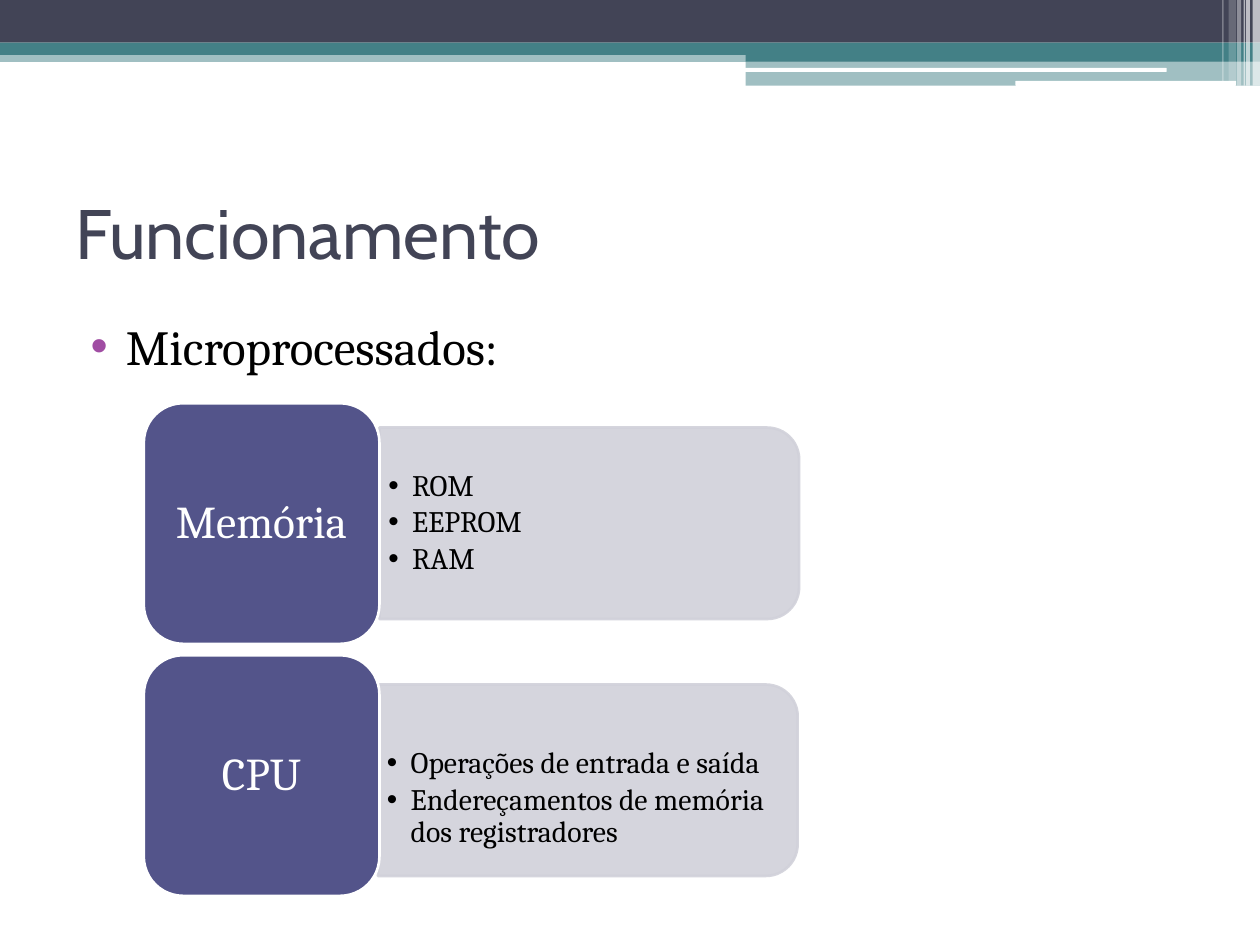
from typing import NamedTuple, Optional

from lxml import etree
from pptx import Presentation
from pptx import util as u
from pptx.dml.color import RGBColor
from pptx.enum import shapes, text
from pptx.oxml.ns import qn

DARK, TEAL, WHITE, BLACK = "424456", "438086", "FFFFFF", "000000"
INDIGO, PALE, PURPLE = "53548A", "D1D1DA", "A04DA3"
HEAD_FONT, BODY_FONT = "Cabin", "Cambria"
RECT = shapes.MSO_SHAPE.RECTANGLE
ROUND = shapes.MSO_SHAPE.ROUNDED_RECTANGLE
TAB = shapes.MSO_SHAPE.ROUND_2_SAME_RECTANGLE


class Box(NamedTuple):
    """Left, top, width and height in centimetres."""
    x: float
    y: float
    w: float
    h: float

    def emu(self) -> list:
        return [u.Cm(v) for v in self]


class Bar(NamedTuple):
    box: Box
    color: str
    alpha: int = 100
    kind: int = RECT


class Row(NamedTuple):
    label: str
    items: list
    tile_y: float
    panel_x: float
    panel_y: float
    top_inset: float


BARS = [
    Bar(Box(0, 1.02, 25.4, 0.23), TEAL, 50),
    Bar(Box(0, 0, 25.4, 0.86), DARK),
    Bar(Box(0, 0.86, 25.4, 0.25), TEAL),
    Bar(Box(15.03, 0.99, 10.37, 0.25), TEAL),
    Bar(Box(15.03, 1.23, 10.37, 0.5), TEAL, 50),
    Bar(Box(15.01, 1.37, 8.51, 0.08), WHITE, kind=ROUND),
    Bar(Box(20.47, 1.63, 4.45, 0.1), WHITE, kind=ROUND),
] + [
    Bar(Box(x, 0, w, h), WHITE, alpha)
    for x, w, h, alpha in [
        (25.25, 0.15, 1.73, 65), (25.12, 0.08, 1.73, 65), (25.07, 0.03, 1.73, 60),
        (24.94, 0.08, 1.73, 40), (24.77, 0.15, 1.63, 20), (24.64, 0.03, 1.63, 30),
    ]
]

ROWS = [
    Row("Memória", ["ROM", "EEPROM", "RAM"], 8.13, 7.65, 8.62, 0.1),
    Row("CPU", ["Operações de entrada e saída",
                "Endereçamentos de memória dos registradores"],
        13.21, 7.62, 13.8, 0.84),
]
TILE_X, TILE_W, TILE_H = 2.9, 4.75, 4.85
PANEL_W, PANEL_H = 8.46, 3.86
ITEMS_W, ITEMS_H = 8.26, 3.51


def rgb(value: str) -> RGBColor:
    return RGBColor.from_string(value)


def paint(fill, color: str, alpha: int = 100) -> None:
    """Make a fill solid, with its opacity in per cent."""
    fill.solid()
    fill.fore_color.rgb = rgb(color)
    if alpha < 100:
        clr = fill._xPr.find(qn("a:solidFill"))[0]
        etree.SubElement(clr, qn("a:alpha"), val=str(alpha * 1000))


def add_block(s, kind: int, box: Box, color: str, alpha: int = 100,
              line: Optional[str] = None):
    sp = s.shapes.add_shape(kind, *box.emu())
    sp.shadow.inherit = False
    paint(sp.fill, color, alpha)
    if line:
        sp.line.width = u.Pt(1.5)
        paint(sp.line.fill, line, alpha)
    else:
        sp.line.fill.background()
    return sp


def set_frame(tf, anchor, side: float, top: float, bottom: float) -> None:
    tf.word_wrap = True
    tf.vertical_anchor = anchor
    tf.margin_left = tf.margin_right = u.Cm(side)
    tf.margin_top, tf.margin_bottom = u.Cm(top), u.Cm(bottom)


def add_run(p, words: str, size: int, color: str, font: str = BODY_FONT) -> None:
    r = p.add_run()
    r.text = words
    r.font.size, r.font.name = u.Pt(size), font
    r.font.color.rgb = rgb(color)


def add_bullet(p, left: float, hang: float, color: str) -> None:
    """Hang a dot before the paragraph; call after the spacing is set."""
    pPr = p._p.get_or_add_pPr()
    pPr.set("marL", str(u.Cm(left)))
    pPr.set("indent", str(-u.Cm(hang)))
    clr = etree.SubElement(pPr, qn("a:buClr"))
    etree.SubElement(clr, qn("a:srgbClr"), val=color)
    etree.SubElement(pPr, qn("a:buFont"), typeface="Arial")
    etree.SubElement(pPr, qn("a:buChar"), char="•")


def add_heading(s) -> None:
    tf = s.shapes.add_textbox(*Box(1.27, 3.18, 22.86, 2.97).emu()).text_frame
    set_frame(tf, text.MSO_ANCHOR.MIDDLE, 0.25, 0.13, 0.13)
    add_run(tf.paragraphs[0], "Funcionamento", 40, DARK, HEAD_FONT)

    tf = s.shapes.add_textbox(*Box(1.27, 6.25, 22.86, 1.88).emu()).text_frame
    set_frame(tf, text.MSO_ANCHOR.TOP, 0.25, 0.13, 0.13)
    p = tf.paragraphs[0]
    p.space_before = u.Pt(3)
    add_bullet(p, 1.02, 0.71, PURPLE)
    add_run(p, "Microprocessados:", 28, BLACK)


def add_row(s, row: Row) -> None:
    """Draw a side panel with its list, then the labelled tile."""
    turned = Box(row.panel_x + (PANEL_W - PANEL_H) / 2,
                 row.panel_y + (PANEL_H - PANEL_W) / 2, PANEL_H, PANEL_W)
    add_block(s, TAB, turned, PALE, 90, PALE).rotation = 90

    items = Box(row.panel_x, row.panel_y + (PANEL_H - ITEMS_H) / 2, ITEMS_W, ITEMS_H)
    tf = s.shapes.add_textbox(*items.emu()).text_frame
    set_frame(tf, text.MSO_ANCHOR.MIDDLE, 0.18, row.top_inset, 0.1)
    for i, item in enumerate(row.items):
        p = tf.add_paragraph() if i else tf.paragraphs[0]
        p.level = 1
        p.line_spacing, p.space_after = 0.9, u.Pt(2.5)
        add_bullet(p, 0.48, 0.48, BLACK)
        add_run(p, item, 17, BLACK)

    tile = Box(TILE_X, row.tile_y, TILE_W, TILE_H)
    tf = add_block(s, ROUND, tile, INDIGO, line=WHITE).text_frame
    set_frame(tf, text.MSO_ANCHOR.MIDDLE, 0.28, 0.13, 0.13)
    p = tf.paragraphs[0]
    p.alignment, p.line_spacing = text.PP_ALIGN.CENTER, 0.9
    add_run(p, row.label, 26, WHITE)


def main() -> None:
    prs = Presentation()
    prs.slide_width, prs.slide_height = u.Cm(25.4), u.Cm(19.05)
    s = prs.slides.add_slide(prs.slide_layouts[6])
    for bar in BARS:
        add_block(s, bar.kind, bar.box, bar.color, bar.alpha)
    add_heading(s)
    for row in ROWS:
        add_row(s, row)
    prs.save("out.pptx")


if __name__ == "__main__":
    main()
